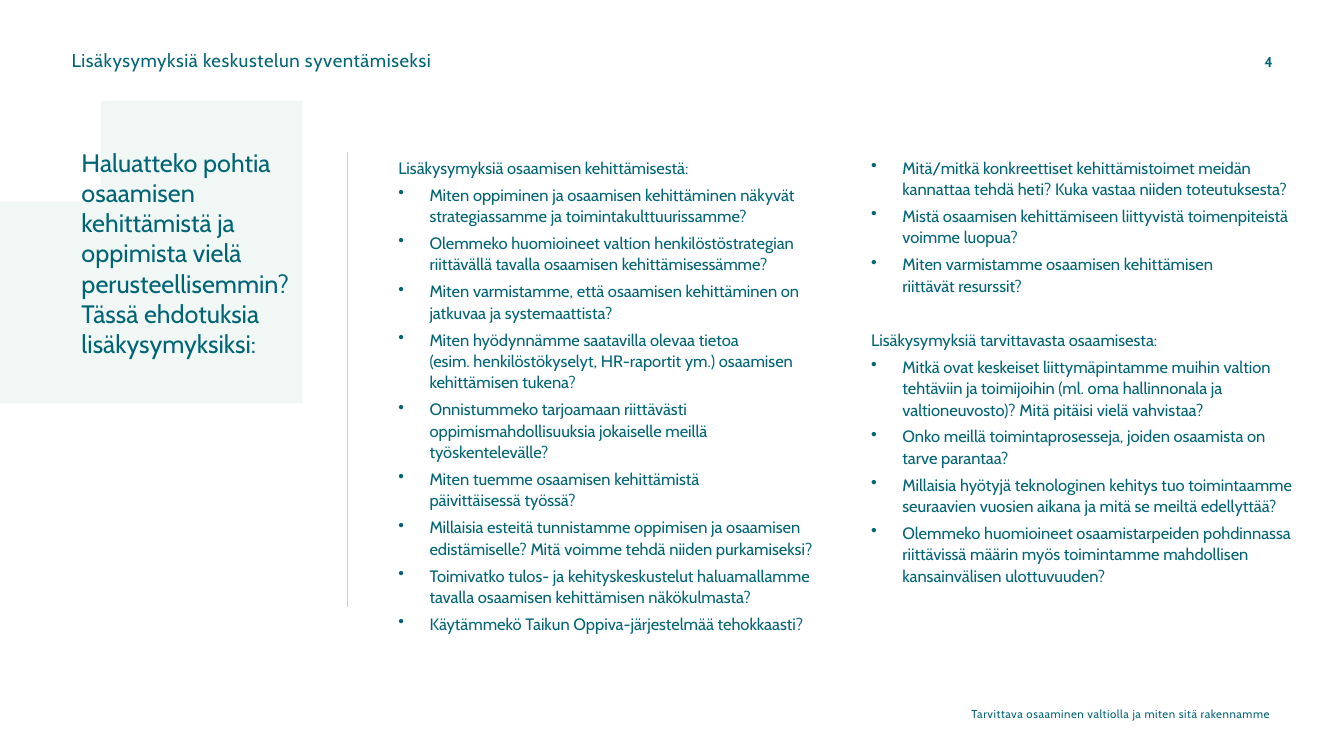
from copy import deepcopy

from lxml.etree import SubElement
from pptx import Presentation
from pptx.dml.color import RGBColor
from pptx.enum.shapes import MSO_CONNECTOR as Connector
from pptx.enum.text import PP_ALIGN as Align
from pptx.oxml.ns import qn
from pptx.util import Inches, Pt

PEBBLE_OUTLINE = [
    (2.37, 0.97), (2.17, 0.90), (1.96, 0.88), (1.74, 0.90), (1.51, 0.97),
    (1.28, 1.07), (1.06, 1.21), (0.84, 1.37), (0.65, 1.56), (0.47, 1.79),
    (0.34, 2.03), (0.23, 2.30), (0.16, 2.57), (0.15, 2.83), (0.18, 3.09),
    (0.26, 3.32), (0.39, 3.56), (0.56, 3.76), (0.74, 3.93), (0.96, 4.06),
    (1.21, 4.14), (1.46, 4.18), (1.73, 4.15), (2.00, 4.08), (2.26, 3.96),
    (2.50, 3.79), (2.72, 3.56), (2.86, 3.32), (2.97, 3.09), (3.07, 2.84),
    (3.16, 2.57), (3.22, 2.34), (3.26, 2.10), (3.27, 1.86), (3.23, 1.63),
    (3.14, 1.47), (3.01, 1.36), (2.82, 1.25), (2.64, 1.14), (2.50, 1.04),
]

DEVELOPMENT_HEADING = "Lisäkysymyksiä osaamisen kehittämisestä:"
DEVELOPMENT_QUESTIONS = [
    "Miten oppiminen ja osaamisen kehittäminen näkyvät strategiassamme ja toimintakulttuurissamme?",
    "Olemmeko huomioineet valtion henkilöstöstrategian riittävällä tavalla osaamisen kehittämisessämme?",
    "Miten varmistamme, että osaamisen kehittäminen on jatkuvaa ja systemaattista?",
    "Miten hyödynnämme saatavilla olevaa tietoa\v(esim. henkilöstökyselyt, HR-raportit ym.) "
    "osaamisen kehittämisen tukena?",
    "Onnistummeko tarjoamaan riittävästi oppimismahdollisuuksia jokaiselle meillä työskentelevälle?",
    "Miten tuemme osaamisen kehittämistä\vpäivittäisessä työssä?",
    "Millaisia esteitä tunnistamme oppimisen ja osaamisen edistämiselle? "
    "Mitä voimme tehdä niiden purkamiseksi?",
    "Toimivatko tulos- ja kehityskeskustelut haluamallamme tavalla osaamisen kehittämisen näkökulmasta?",
    "Käytämmekö Taikun Oppiva-järjestelmää tehokkaasti?",
]
ACTION_QUESTIONS = [
    "Mitä/mitkä konkreettiset kehittämistoimet meidän kannattaa tehdä heti? "
    "Kuka vastaa niiden toteutuksesta?",
    "Mistä osaamisen kehittämiseen liittyvistä toimenpiteistä voimme luopua?",
    "Miten varmistamme osaamisen kehittämisen\vriittävät resurssit?",
]
NEEDS_HEADING = "Lisäkysymyksiä tarvittavasta osaamisesta:"
NEEDS_QUESTIONS = [
    "Mitkä ovat keskeiset liittymäpintamme muihin valtion tehtäviin ja toimijoihin "
    "(ml. oma hallinnonala ja valtioneuvosto)? Mitä pitäisi vielä vahvistaa?",
    "Onko meillä toimintaprosesseja, joiden osaamista on tarve parantaa?",
    "Millaisia hyötyjä teknologinen kehitys tuo toimintaamme seuraavien vuosien aikana "
    "ja mitä se meiltä edellyttää?",
    "Olemmeko huomioineet osaamistarpeiden pohdinnassa riittävissä määrin myös toimintamme "
    "mahdollisen kansainvälisen ulottuvuuden?",
]


def color(value):
    return RGBColor.from_string(value)


class SlideBuilder:
    font = "Cabin"
    ink = "006475"
    pale = "F0F7F5"
    rule = "B5D8CC"
    body_size = 11.8
    question_gap = 4
    section_gap = 23.4

    def __init__(self, slide):
        self.slide = slide

    def pebble(self, points):
        builder = self.slide.shapes.build_freeform(*points[0], scale=Inches(1))
        builder.add_line_segments(points[1:], close=True)
        shape = builder.convert_to_shape()
        shape.shadow.inherit = False
        shape.fill.solid()
        shape.fill.fore_color.rgb = color(self.pale)
        shape.line.fill.background()

    def divider(self, x, top, bottom):
        connector = self.slide.shapes.add_connector(
            Connector.STRAIGHT, Inches(x), Inches(top), Inches(x), Inches(bottom))
        connector.line.color.rgb = color(self.rule)
        connector.line.width = Pt(0.62)
        SubElement(connector._element.spPr, qn("a:effectLst"))

    def frame(self, left, top, width, height, insets):
        shape = self.slide.shapes.add_textbox(
            Inches(left), Inches(top), Inches(width), Inches(height))
        text_frame = shape.text_frame
        text_frame.word_wrap = True
        side, edge, foot = insets
        text_frame.margin_left = text_frame.margin_right = Inches(side)
        text_frame.margin_top, text_frame.margin_bottom = Inches(edge), Inches(foot)
        return text_frame

    def style(self, paragraph, size, bold=False, tracking=0):
        for run in paragraph.runs:
            run.font.name = self.font
            run.font.size = Pt(size)
            run.font.bold = bold
            run.font.color.rgb = color(self.ink)
            if tracking:
                run.font._element.set("spc", str(round(tracking * 100)))
        for line_break in paragraph._p.findall(qn("a:br")):
            line_break.append(deepcopy(paragraph.runs[0].font._element))

    def label(self, text, box, size, bold=False, tracking=0, align=Align.LEFT, insets=(0, 0.01, 0)):
        paragraph = self.frame(*box, insets).paragraphs[0]
        paragraph.text = text
        paragraph.alignment = align
        paragraph._p.get_or_add_pPr().set("marL", str(Inches(0.01)))
        self.style(paragraph, size, bold, tracking)

    def bullet(self, paragraph):
        properties = paragraph._p.get_or_add_pPr()
        properties.set("marL", str(Inches(0.32)))
        properties.set("indent", str(Inches(-0.31)))
        SubElement(properties, qn("a:buSzPct"), val="102000")
        SubElement(properties, qn("a:buChar"), char="•")

    def question_column(self, box, sections):
        text_frame = self.frame(*box, (0, 0.14, 0))
        entries = []
        for heading, questions in sections:
            if heading:
                entries.append((heading, False))
            entries += [(question, True) for question in questions]
        for index, (text, is_question) in enumerate(entries):
            paragraph = text_frame.add_paragraph() if index else text_frame.paragraphs[0]
            paragraph.text = text
            if is_question:
                self.bullet(paragraph)
            else:
                paragraph._p.get_or_add_pPr().set("marL", str(Inches(0.01)))
            paragraph.line_spacing = 1.08
            if index:
                paragraph.space_before = Pt(self.question_gap if is_question else self.section_gap)
            self.style(paragraph, self.body_size)


def main():
    presentation = Presentation()
    presentation.slide_width = Inches(13.33)
    presentation.slide_height = Inches(7.5)
    builder = SlideBuilder(presentation.slides.add_slide(presentation.slide_layouts[6]))

    builder.label("Tarvittava osaaminen valtiolla ja miten sitä rakennamme",
                  (9.13, 7, 3.47, 0.14), 8.2, tracking=0.4, align=Align.RIGHT)
    builder.pebble(PEBBLE_OUTLINE)
    builder.label("Lisäkysymyksiä keskustelun syventämiseksi",
                  (0.7, 0.48, 6.07, 0.24), 13.3, tracking=0.4)
    builder.label("Haluatteko pohtia osaamisen kehittämistä ja oppimista vielä perusteellisemmin? "
                  "Tässä ehdotuksia lisäkysymyksiksi:",
                  (0.7, 1.41, 2.49, 2.22), 18, insets=(0.1, 0.05, 0.05))
    builder.question_column((3.94, 1.41, 4.29, 5.19),
                            [(DEVELOPMENT_HEADING, DEVELOPMENT_QUESTIONS)])
    builder.question_column((8.63, 1.41, 4.19, 5.41),
                            [(None, ACTION_QUESTIONS), (NEEDS_HEADING, NEEDS_QUESTIONS)])
    builder.divider(3.45, 1.51, 6.02)
    builder.label("4", (12.53, 0.52, 0.1, 0.18), 10.3, bold=True, tracking=0.2)

    presentation.save("out.pptx")


if __name__ == "__main__":
    main()
